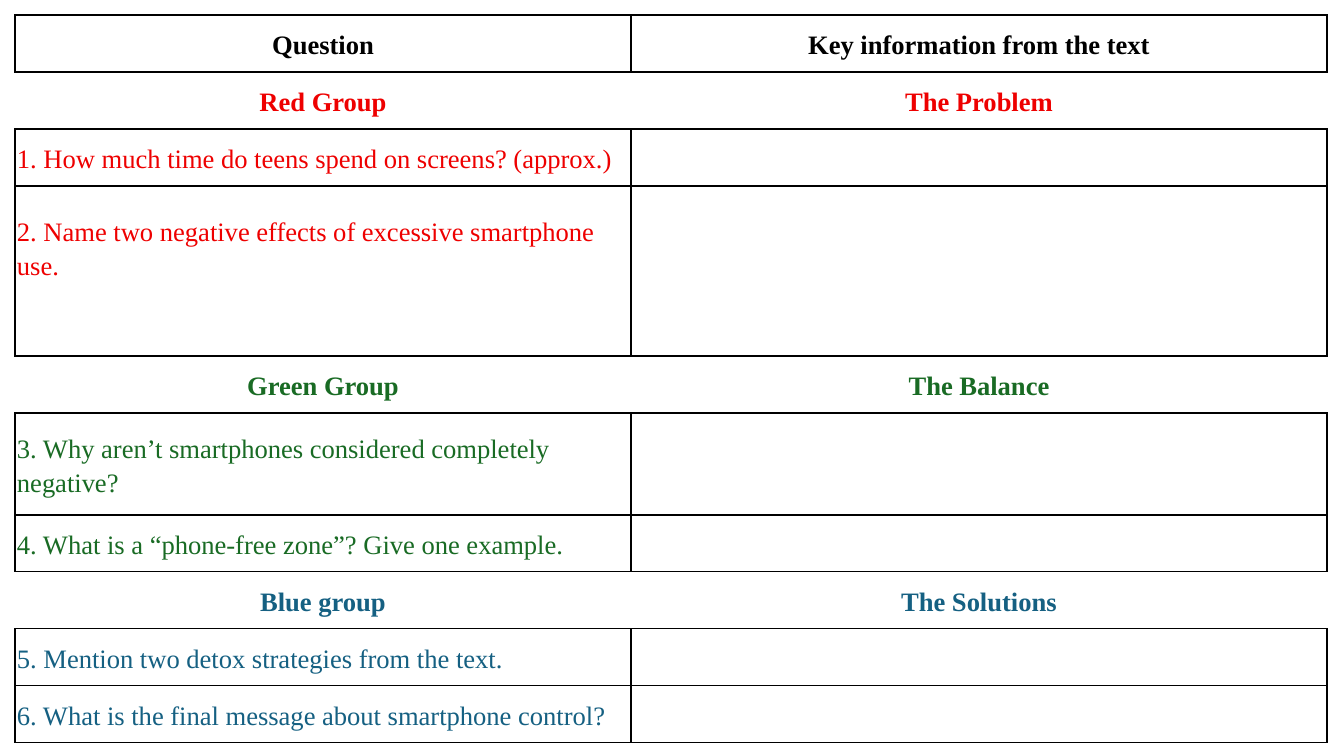
import pptx
import pptx.dml.color
import pptx.enum.text
import pptx.oxml
import pptx.oxml.ns
import pptx.util

# Content: kind, colour, height in px, cell texts
BLACK, RED, GREEN, BLUE = "000000", "EE0000", "196B24", "156082"
ROWS = [
    ("header", BLACK, 57, ("Question", "Key information from the text")),
    ("group", RED, 57, ("Red Group", "The Problem")),
    ("question", RED, 57, ("1. How much time do teens spend on screens? (approx.)", "")),
    ("raised", RED, 170, ("2. Name two negative effects of excessive smartphone use.", "")),
    ("group", GREEN, 57, ("Green Group", "The Balance")),
    ("question", GREEN, 102, ("3. Why aren’t smartphones considered completely negative?", "")),
    ("question", GREEN, 57, ("4. What is a “phone-free zone”? Give one example.", "")),
    ("group", BLUE, 57, ("Blue group", "The Solutions")),
    ("question", BLUE, 57, ("5. Mention two detox strategies from the text.", "")),
    ("question", BLUE, 57, ("6. What is the final message about smartphone control?", "")),
]
COLUMNS = (616, 696)
PAGE_WIDTH, PAGE_HEIGHT, EDGE = 1344, 756, 15
INSET, RAISED_INSET = 2, 49
BORDER = 1
ALIGN = pptx.enum.text.PP_ALIGN


def px(length):
    return pptx.util.Emu(round(length * 914400 / 100.8))


def colour(value):
    return pptx.dml.color.RGBColor.from_string(value)


def apply(target, values):
    for name, value in values.items():
        setattr(target, name, value)


def set_borders(cell, visible):
    properties = cell._tc.get_or_add_tcPr()
    namespace = pptx.oxml.ns.nsdecls("a")
    for index, side in enumerate("LRTB"):
        paint = "<a:noFill/>"
        if side in visible:
            paint = f'<a:solidFill><a:srgbClr val="{BLACK}"/></a:solidFill>'
        line = f'<a:ln{side} {namespace} w="{pptx.util.Pt(BORDER)}">{paint}</a:ln{side}>'
        properties.insert(index, pptx.oxml.parse_xml(line))


def write(cell, text, kind, ink):
    titled = kind in ("header", "group")
    para = cell.text_frame.paragraphs[0]
    apply(para, {
        "alignment": ALIGN.CENTER if titled else ALIGN.LEFT,
        "line_spacing": 1.15,
        "space_after": pptx.util.Pt(8),
    })
    span = para.add_run()
    span.text = text
    apply(span.font, {"name": "Times New Roman", "size": pptx.util.Pt(19), "bold": titled})
    span.font.color.rgb = colour(ink)


# Page
deck = pptx.Presentation()
apply(deck, {"slide_width": px(PAGE_WIDTH), "slide_height": px(PAGE_HEIGHT)})
page = deck.slides.add_slide(deck.slide_layouts[6])

# Table grid
total_height = sum(height for _, _, height, _ in ROWS)
frame = page.shapes.add_table(len(ROWS), len(COLUMNS), px(EDGE), px(EDGE),
                              px(sum(COLUMNS)), px(total_height))
table = frame.table
apply(table, {"first_row": False, "horz_banding": False})
for column, width in zip(table.columns, COLUMNS):
    column.width = px(width)

# Cells
for row, (kind, ink, height, texts) in zip(table.rows, ROWS):
    row.height = px(height)
    for cell, text in zip(row.cells, texts):
        apply(cell, {
            "vertical_anchor": pptx.enum.text.MSO_ANCHOR.MIDDLE,
            "margin_left": px(INSET),
            "margin_right": px(INSET),
            "margin_top": px(INSET),
            "margin_bottom": px(RAISED_INSET if kind == "raised" else INSET),
        })
        cell.fill.background()
        set_borders(cell, "TB" if kind == "group" else "LRTB")
        if text:
            write(cell, text, kind, ink)

deck.save("out.pptx")
